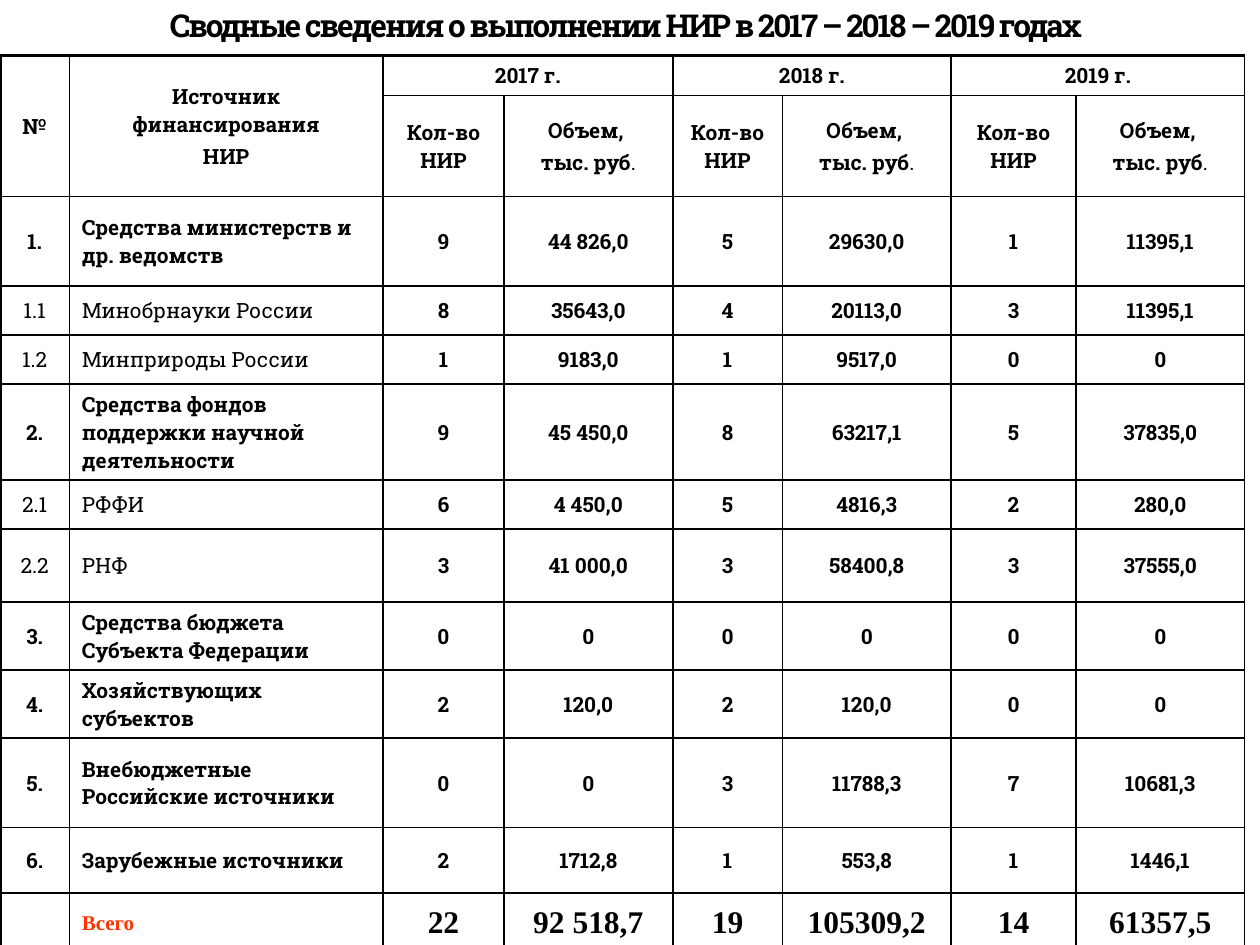
import pptx
import pptx.util
import pptx.dml.color
import pptx.enum.text
import pptx.oxml
import pptx.oxml.ns

Inches, Pt = pptx.util.Inches, pptx.util.Pt
ALIGN = pptx.enum.text.PP_ALIGN
MIDDLE = pptx.enum.text.MSO_ANCHOR.MIDDLE
SLAB, TIMES = "Roboto Slab", "Times New Roman"


def add_run(p, text, color, **fmt):
    r = p.add_run()
    r.text = text
    for name, value in fmt.items():
        setattr(r.font, name, value)
    r.font.color.rgb = pptx.dml.color.RGBColor.from_string(color)
    return r


def set_border(cell, side, width):
    cell._tc.get_or_add_tcPr().append(pptx.oxml.parse_xml(
        f'<a:ln{side} {pptx.oxml.ns.nsdecls("a")} w="{Pt(width)}"><a:solidFill>'
        f'<a:srgbClr val="000000"/></a:solidFill></a:ln{side}>'))


prs = pptx.Presentation()
prs.slide_width, prs.slide_height = Inches(10), Inches(7.5)
s = prs.slides.add_slide(prs.slide_layouts[6])

sp = s.shapes.add_textbox(Inches(0.51), Inches(0), Inches(8.9), Inches(0.44))
tf = sp.text_frame
tf.word_wrap = True
tf.vertical_anchor = MIDDLE
p = tf.paragraphs[0]
p.alignment = ALIGN.CENTER
p.line_spacing = 0.9
r = add_run(p, "Сводные сведения о выполнении НИР в 2017 – 2018 – 2019 годах", "000000",
            name=SLAB, size=Pt(18), bold=True)
r._r.get_or_add_rPr().set("spc", "-120")

widths = [0.55, 2.49, 0.96, 1.34, 0.87, 1.34, 0.99, 1.34]
heights = [0.32, 0.8, 0.71, 0.39, 0.39, 0.76, 0.39, 0.58, 0.54, 0.54, 0.71, 0.52, 0.48]
rows = [
    ["№", "Источник финансирования\nНИР", "2017 г.", "", "2018 г.", "", "2019 г.", ""],
    ["", ""] + ["Кол-во НИР", "Объем, \nтыс. руб."] * 3,
    ["1.", "Средства министерств и др. ведомств", "9", "44 826,0", "5", "29630,0", "1", "11395,1"],
    ["1.1", "Минобрнауки России", "8", "35643,0", "4", "20113,0", "3", "11395,1"],
    ["1.2", "Минприроды России", "1", "9183,0", "1", "9517,0", "0", "0"],
    ["2.", "Средства фондов поддержки научной деятельности", "9", "45 450,0", "8", "63217,1", "5", "37835,0"],
    ["2.1", "РФФИ", "6", "4 450,0", "5", "4816,3", "2", "280,0"],
    ["2.2", "РНФ", "3", "41 000,0", "3", "58400,8", "3", "37555,0"],
    ["3.", "Средства бюджета Субъекта Федерации", "0", "0", "0", "0", "0", "0"],
    ["4.", "Хозяйствующих субъектов", "2", "120,0", "2", "120,0", "0", "0"],
    ["5.", "Внебюджетные Российские источники", "0", "0", "3", "11788,3", "7", "10681,3"],
    ["6.", "Зарубежные источники", "2", "1712,8", "1", "553,8", "1", "1446,1"],
    ["", "Всего", "22", "92 518,7", "19", "105309,2", "14", "61357,5"],
]
last = len(rows) - 1

table = s.shapes.add_table(len(rows), len(widths), Inches(0), Inches(0.44),
                           Inches(sum(widths)), Inches(sum(heights))).table
table.first_row = table.horz_banding = False
for column, width in zip(table.columns, widths):
    column.width = Inches(width)
for row, height in zip(table.rows, heights):
    row.height = Inches(height)

for i, row in enumerate(rows):
    for j, text in enumerate(row):
        cell = table.cell(i, j)
        cell.vertical_anchor = MIDDLE
        set_border(cell, "L", 2.25 if j == 0 else 1)
        set_border(cell, "R", 1)
        set_border(cell, "T", 2.25 if i == 0 else 1)
        set_border(cell, "B", 2.25 if i == last else 1)
        cell.fill.background()
        if not text:
            continue
        size = 18 if i == last and j > 1 else 12
        color = "FF3300" if text == "Всего" else "000000"
        subitem = j < 2 and len(row[0]) == 3
        fmt = {"name": TIMES if i == last else SLAB, "size": Pt(size), "bold": not subitem}
        tf = cell.text_frame
        for k, line in enumerate(text.split("\n")):
            p = tf.add_paragraph() if k else tf.paragraphs[0]
            p.alignment = ALIGN.LEFT if j == 1 and i > 1 else ALIGN.CENTER
            p.space_before = Pt(size * 0.2)
            if line == "тыс. руб.":
                add_run(p, line[:-1], color, **fmt)
                add_run(p, ".", color, **{**fmt, "bold": False})
            else:
                add_run(p, line, color, **fmt)

for j in (0, 1):
    table.cell(0, j).merge(table.cell(1, j))
for j in (2, 4, 6):
    table.cell(0, j).merge(table.cell(0, j + 1))

prs.save("out.pptx")
